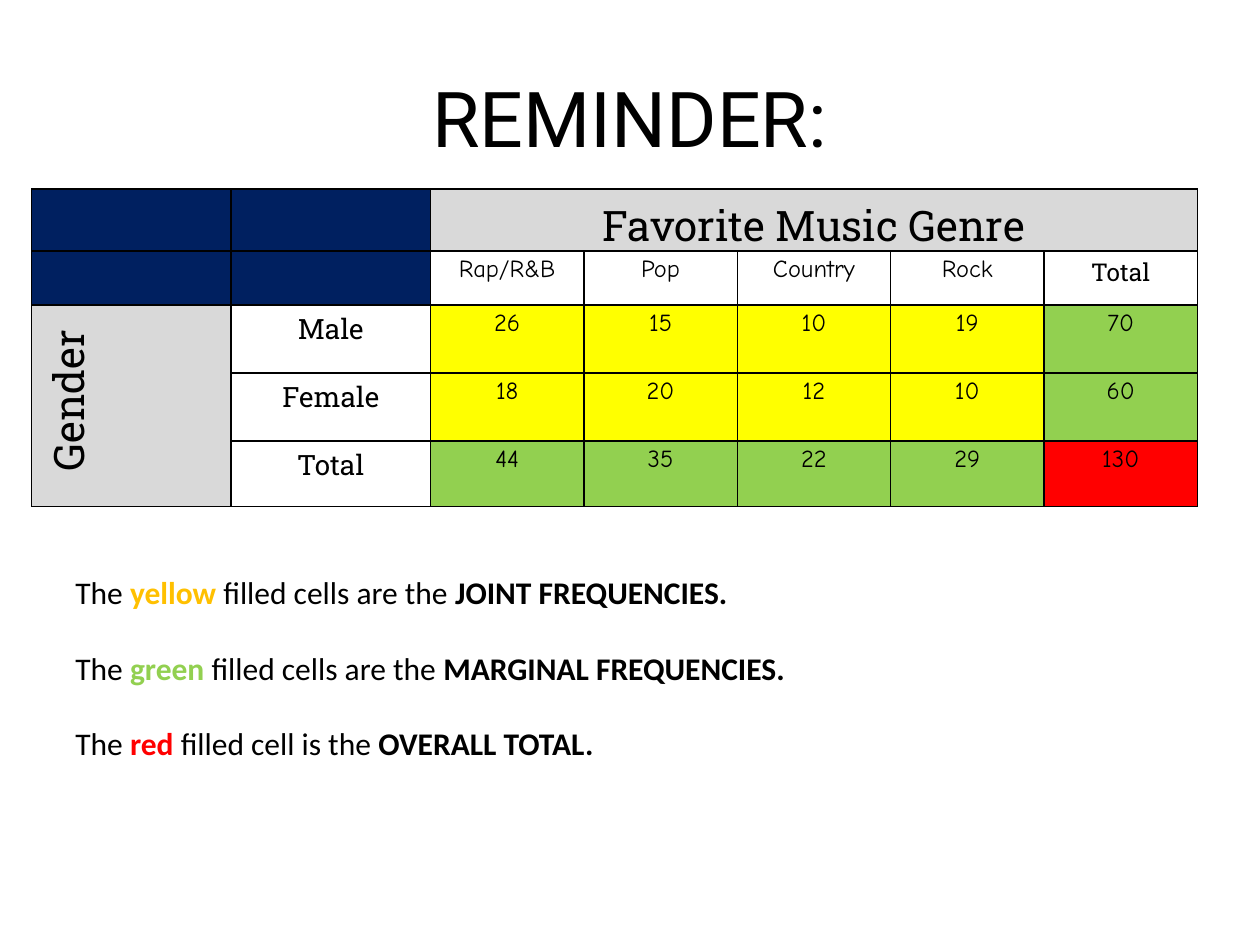
from dataclasses import dataclass

from lxml import etree
from pptx import Presentation
from pptx.dml.color import RGBColor
from pptx.enum.text import MSO_ANCHOR, PP_ALIGN
from pptx.oxml.ns import qn
from pptx.util import Cm, Pt

CENTER = PP_ALIGN.CENTER
MIDDLE = MSO_ANCHOR.MIDDLE


@dataclass(frozen=True)
class Theme:
    ink: str = "000000"
    corner: str = "002060"
    heading: str = "D9D9D9"
    joint: str = "FFFF00"
    joint_word: str = "FFC000"
    marginal: str = "92D050"
    overall: str = "FF0000"
    title_font: str = "Roboto"
    label_font: str = "Roboto Slab"
    value_font: str = "Comic Neue"
    body_font: str = "Calibri"
    title_size: int = 44
    heading_size: int = 24
    body_size: int = 18
    label_size: int = 16
    value_size: int = 14


THEME = Theme()

GENRES = ["Rap/R&B", "Pop", "Country", "Rock", "Total"]
COUNTS = {
    "Male": [26, 15, 10, 19, 70],
    "Female": [18, 20, 12, 10, 60],
    "Total": [44, 35, 22, 29, 130],
}
KEY = [
    ("yellow", THEME.joint_word, " filled cells are the ", "JOINT FREQUENCIES."),
    ("green", THEME.marginal, " filled cells are the ", "MARGINAL FREQUENCIES."),
    ("red", THEME.overall, " filled cell is the ", "OVERALL TOTAL."),
]


def set_font(font, name, size, color=THEME.ink):
    font.name = name
    font.size = Pt(size)
    font.color.rgb = RGBColor.from_string(color)


def add_borders(cell):
    properties = cell._tc.get_or_add_tcPr()
    for position, side in enumerate(("lnL", "lnR", "lnT", "lnB")):
        line = etree.Element(qn(f"a:{side}"), w=str(Pt(1)))
        solid = etree.SubElement(line, qn("a:solidFill"))
        etree.SubElement(solid, qn("a:srgbClr"), val=THEME.ink)
        properties.insert(position, line)


def style_cell(cell, fill=None):
    if fill:
        cell.fill.solid()
        cell.fill.fore_color.rgb = RGBColor.from_string(fill)
    else:
        cell.fill.background()
    cell.margin_left = cell.margin_right = Cm(0.15)
    cell.margin_top = cell.margin_bottom = 0
    add_borders(cell)


def write_cell(cell, text, font, size, fill=None):
    style_cell(cell, fill)
    paragraph = cell.text_frame.paragraphs[0]
    paragraph.text = str(text)
    paragraph.alignment = CENTER
    paragraph.line_spacing = 1.15
    set_font(paragraph.font, font, size)


def count_fill(is_total_row, is_total_column):
    return (THEME.joint, THEME.marginal, THEME.overall)[is_total_row + is_total_column]


def add_title(slide, left, top, width, height):
    frame = slide.shapes.add_textbox(left, top, width, height).text_frame
    frame.word_wrap = True
    frame.vertical_anchor = MIDDLE
    heading = frame.paragraphs[0]
    heading.text = "REMINDER:"
    heading.alignment = CENTER
    set_font(heading.font, THEME.title_font, THEME.title_size)


def add_frequency_table(slide, left, top, width, height):
    table = slide.shapes.add_table(5, 7, left, top, width, height).table
    table.first_row = table.horz_banding = False
    label_width = Cm(4.02)
    genre_width = (width - 2 * label_width) // len(GENRES)
    for index, column in enumerate(table.columns):
        column.width = label_width if index < 2 else genre_width
    for row, row_height in zip(table.rows, (1.25, 1.09, 1.37, 1.37, 1.32)):
        row.height = Cm(row_height)

    for row in range(5):
        for column in range(2 if row < 2 else 1):
            style_cell(table.cell(row, column), THEME.corner if row < 2 else THEME.heading)
    for column in range(3, 7):
        style_cell(table.cell(0, column), THEME.heading)

    genre_heading = table.cell(0, 2)
    genre_heading.merge(table.cell(0, 6))
    write_cell(genre_heading, "Favorite Music Genre", THEME.label_font,
               THEME.heading_size, THEME.heading)

    gender_heading = table.cell(2, 0)
    gender_heading.merge(table.cell(4, 0))
    write_cell(gender_heading, "Gender", THEME.label_font, THEME.heading_size, THEME.heading)
    gender_heading._tc.tcPr.set("vert", "vert270")
    gender_heading.text_frame.paragraphs[0]._p.get_or_add_pPr().set("marL", str(Cm(0.2)))

    for column, genre in enumerate(GENRES, start=2):
        font = THEME.label_font if genre == "Total" else THEME.value_font
        write_cell(table.cell(1, column), genre, font, THEME.value_size)

    for row, (gender, counts) in enumerate(COUNTS.items(), start=2):
        write_cell(table.cell(row, 1), gender, THEME.label_font, THEME.label_size)
        for column, (genre, count) in enumerate(zip(GENRES, counts), start=2):
            fill = count_fill(gender == "Total", genre == "Total")
            write_cell(table.cell(row, column), count, THEME.value_font,
                       THEME.value_size, fill)


def add_color_key(slide, left, top, width, height):
    frame = slide.shapes.add_textbox(left, top, width, height).text_frame
    frame.word_wrap = True
    for index, (color_word, color, middle, term) in enumerate(KEY):
        sentence = frame.add_paragraph() if index else frame.paragraphs[0]
        if index:
            sentence.space_before = Pt(21.6)
        parts = [("The ", THEME.ink, False), (color_word, color, True),
                 (middle, THEME.ink, False), (term, THEME.ink, True)]
        for text, part_color, bold in parts:
            part = sentence.add_run()
            part.text = text
            part.font.bold = bold
            set_font(part.font, THEME.body_font, THEME.body_size, part_color)


def main():
    presentation = Presentation()
    presentation.slide_width = Cm(25.4)
    presentation.slide_height = Cm(19.05)
    slide = presentation.slides.add_slide(presentation.slide_layouts[6])
    add_title(slide, Cm(1.27), Cm(0.76), Cm(22.86), Cm(3.18))
    add_frequency_table(slide, Cm(0.64), Cm(3.81), Cm(23.5), Cm(6.4))
    add_color_key(slide, Cm(1.27), Cm(11.43), Cm(22.23), Cm(4.1))
    presentation.save("out.pptx")


if __name__ == "__main__":
    main()
